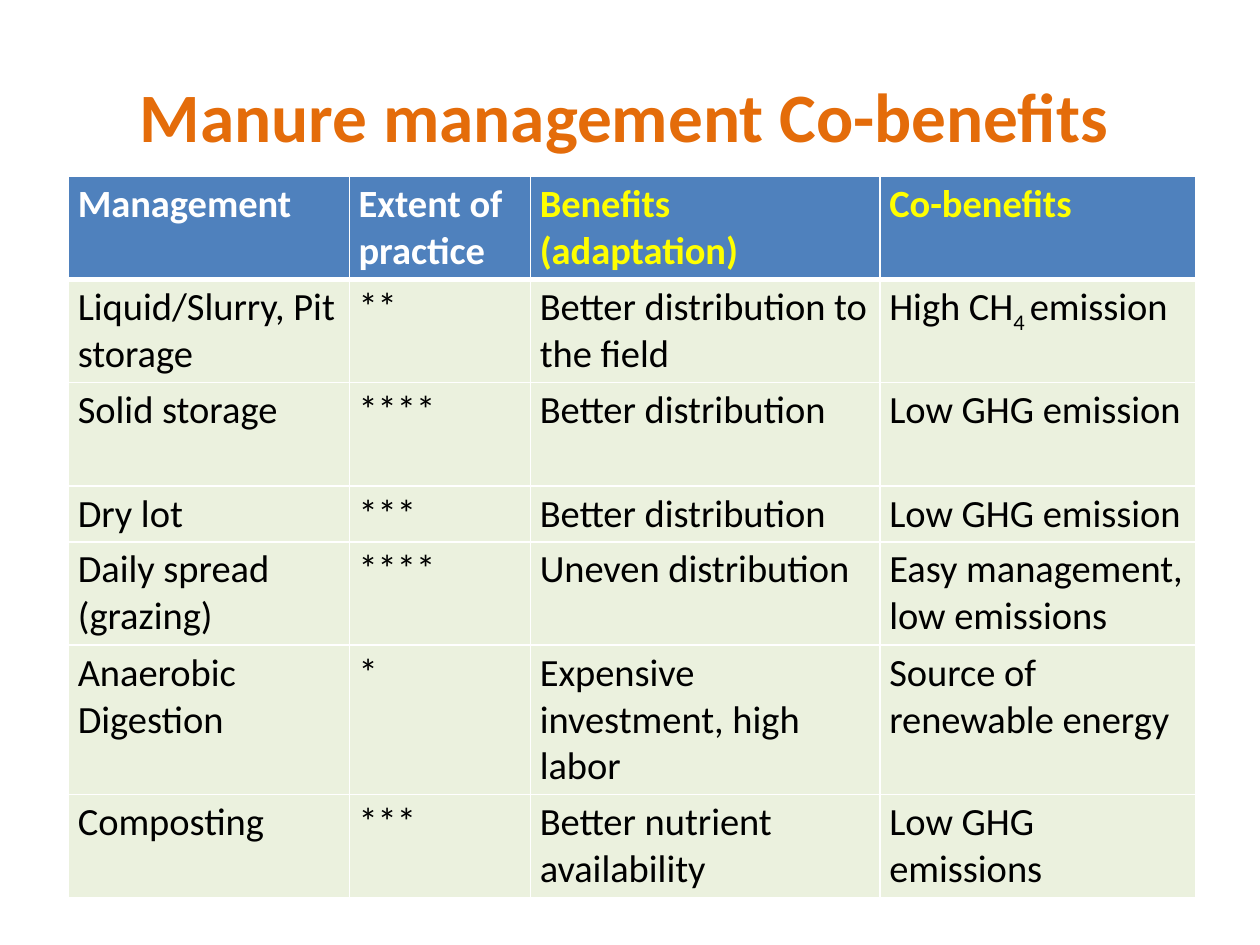
import dataclasses
import typing

import lxml.etree
import pptx
import pptx.dml.color
import pptx.enum.text
import pptx.oxml.ns
import pptx.util

Pt = pptx.util.Pt
qn = pptx.oxml.ns.qn

FONT = "Calibri"
ORANGE, BLUE, GREEN = "E46C0A", "4F81BD", "EBF1DE"
WHITE, YELLOW, BLACK = "FFFFFF", "FFFF00", "000000"


@dataclasses.dataclass
class Row:
    height: float
    texts: tuple[str, ...]


# Table content; "_" marks the start and end of a subscript
COL_WIDTHS = (160.5, 103.5, 199.75, 180.5)
HEADER = Row(58.5, ("Management", "Extent of practice",
                    "Benefits (adaptation)", "Co-benefits"))
HEADER_COLORS = (WHITE, WHITE, YELLOW, YELLOW)
BODY = (
    Row(59, ("Liquid/Slurry, Pit storage", "**",
             "Better distribution to the field", "High CH_4 _emission")),
    Row(59, ("Solid storage", "****", "Better distribution", "Low GHG emission")),
    Row(32, ("Dry lot", "***", "Better distribution", "Low GHG emission")),
    Row(59, ("Daily spread (grazing)", "****", "Uneven distribution",
             "Easy management, low emissions")),
    Row(85.5, ("Anaerobic Digestion", "*", "Expensive investment, high labor",
               "Source of renewable energy")),
    Row(59, ("Composting", "***", "Better nutrient availability",
             "Low GHG emissions")),
)


def rgb(color: str) -> pptx.dml.color.RGBColor:
    return pptx.dml.color.RGBColor.from_string(color)


def set_attrs(obj: typing.Any, values: dict[str, typing.Any]) -> None:
    for name, value in values.items():
        setattr(obj, name, value)


def add_text(p: typing.Any, text: str, size: float, color: str, bold: bool) -> None:
    for i, part in enumerate(text.split("_")):
        r = p.add_run()
        r.text = part
        set_attrs(r.font, {"name": FONT, "size": Pt(size), "bold": bold})
        r.font.color.rgb = rgb(color)
        if i % 2:
            r._r.get_or_add_rPr().set("baseline", "-25000")


def set_border(cell: typing.Any, side: str, width: float) -> None:
    tc_pr = cell._tc.get_or_add_tcPr()
    ln = lxml.etree.SubElement(tc_pr, qn(f"a:ln{side}"), w=str(Pt(width)))
    fill = lxml.etree.SubElement(ln, qn("a:solidFill"))
    lxml.etree.SubElement(fill, qn("a:srgbClr"), val=WHITE)


def fill_cell(cell: typing.Any, text: str, color: str, fill: str, bold: bool,
              top: float, bottom: float) -> None:
    set_attrs(cell, {"margin_left": Pt(5.2), "margin_right": Pt(5.2),
                     "margin_top": Pt(2.6), "margin_bottom": Pt(2.6)})
    for side, width in {"L": 1, "R": 1, "T": top, "B": bottom}.items():
        set_border(cell, side, width)
    cell.fill.solid()
    cell.fill.fore_color.rgb = rgb(fill)
    add_text(cell.text_frame.paragraphs[0], text, 22, color, bold)


def add_title(s: typing.Any, text: str) -> None:
    sp = s.shapes.title
    set_attrs(sp, {"left": Pt(51), "top": Pt(32),
                   "width": Pt(620.5), "height": Pt(67.5)})
    tf = sp.text_frame
    set_attrs(tf, {"word_wrap": True,
                   "auto_size": pptx.enum.text.MSO_AUTO_SIZE.NONE,
                   "vertical_anchor": pptx.enum.text.MSO_ANCHOR.MIDDLE})
    p = tf.paragraphs[0]
    p.alignment = pptx.enum.text.PP_ALIGN.CENTER
    add_text(p, text, 39.6, ORANGE, True)


def add_practice_table(s: typing.Any) -> None:
    rows = (HEADER, *BODY)
    table = s.shapes.add_table(
        len(rows), len(COL_WIDTHS), Pt(39.25), Pt(101),
        Pt(sum(COL_WIDTHS)), Pt(sum(row.height for row in rows))).table
    for col, width in zip(table.columns, COL_WIDTHS):
        col.width = Pt(width)
    for i, row in enumerate(rows):
        table.rows[i].height = Pt(row.height)
        head = i == 0
        for j, text in enumerate(row.texts):
            fill_cell(table.cell(i, j), text,
                      color=HEADER_COLORS[j] if head else BLACK,
                      fill=BLUE if head else GREEN, bold=head,
                      top=3 if i == 1 else 1, bottom=3 if head else 1)


def main() -> None:
    prs = pptx.Presentation()
    set_attrs(prs, {"slide_width": Pt(720), "slide_height": Pt(540)})
    s = prs.slides.add_slide(prs.slide_layouts.get_by_name("Title Only"))
    add_title(s, "Manure management Co-benefits ")
    add_practice_table(s)
    prs.save("out.pptx")


if __name__ == "__main__":
    main()
